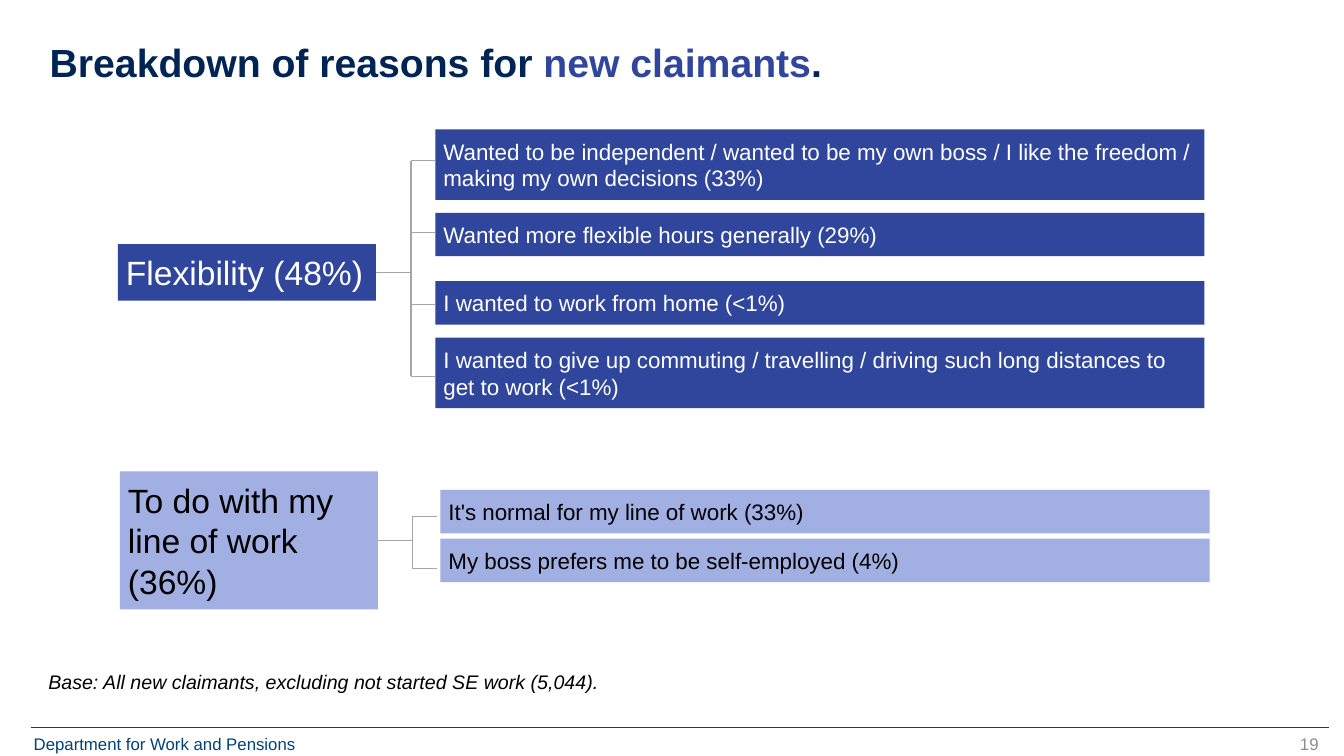
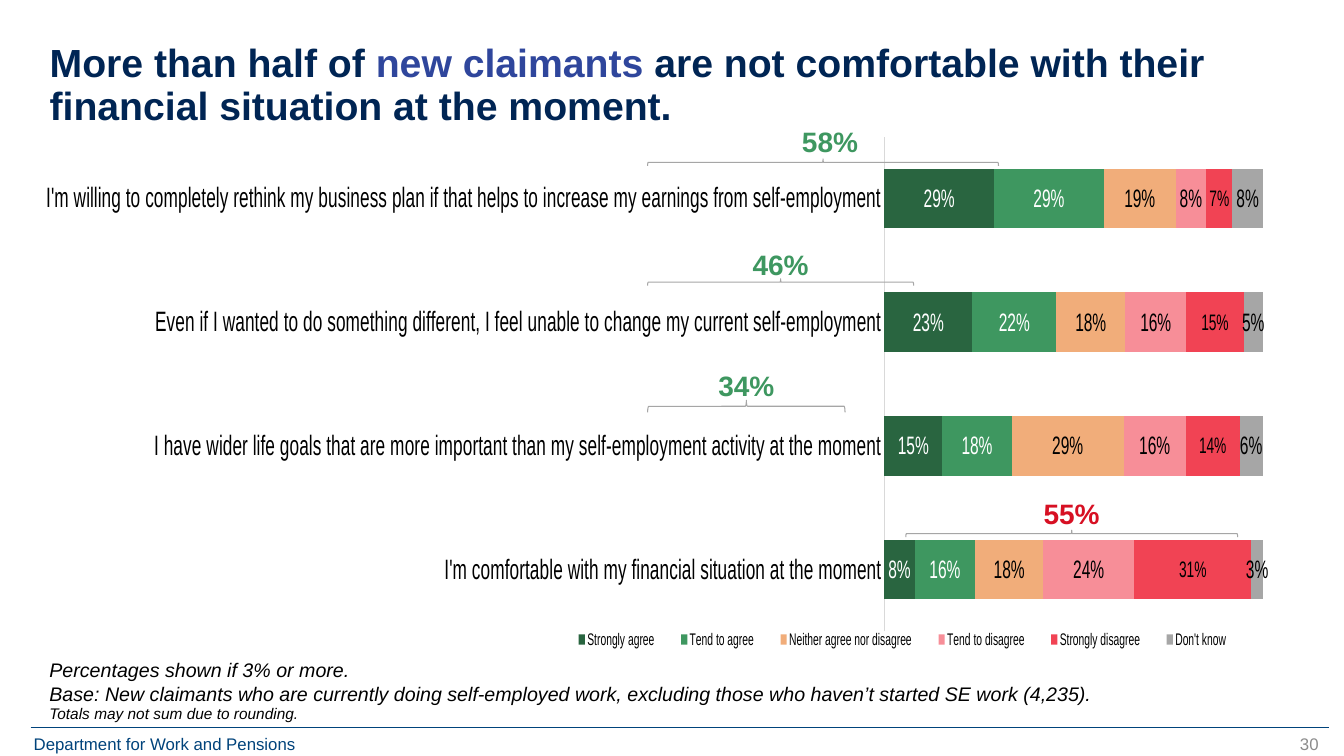
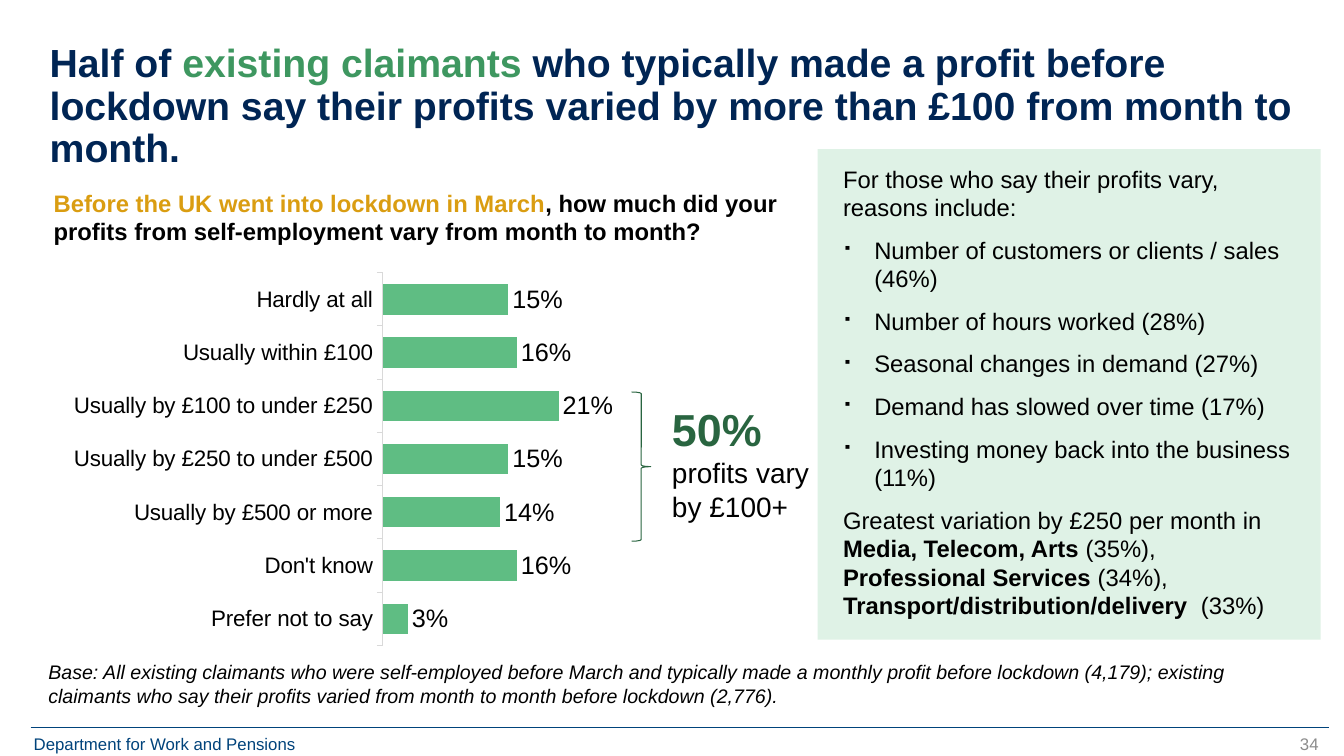
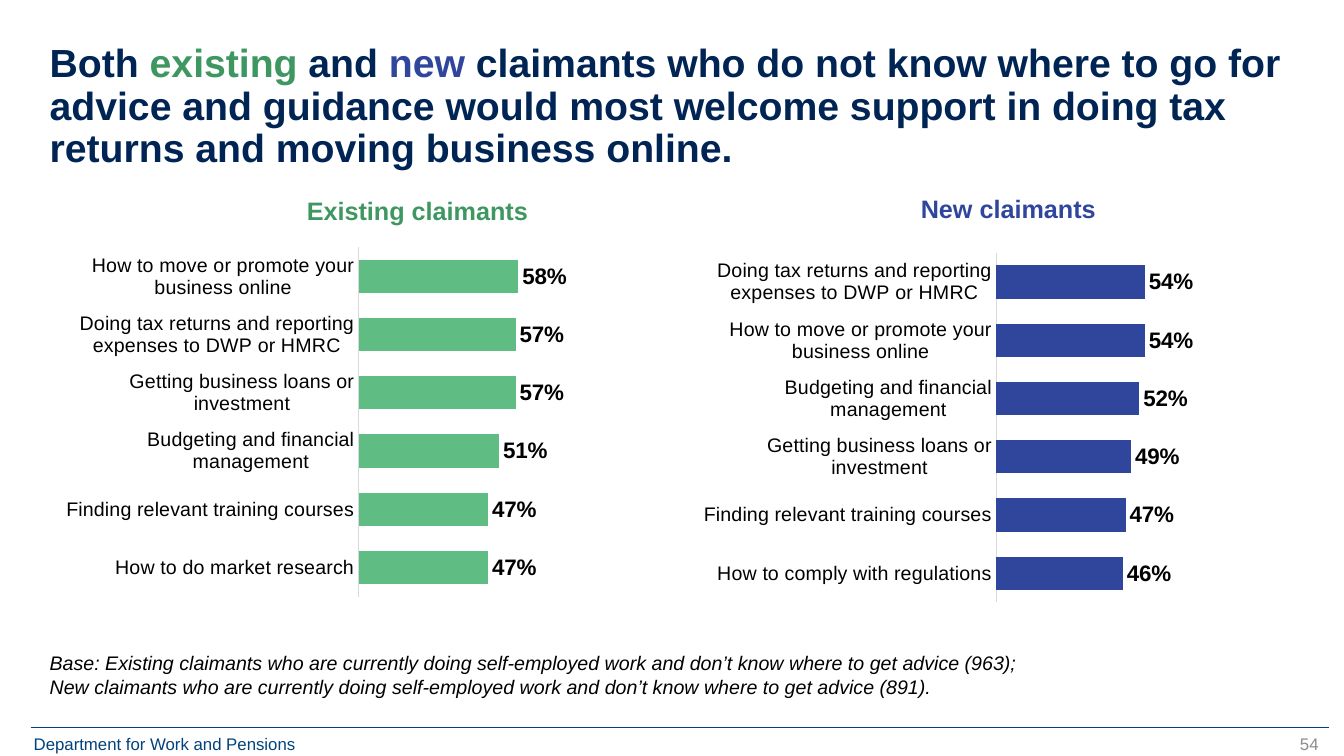
from dataclasses import dataclass
from typing import Optional

from lxml import etree
from pptx import Presentation
from pptx.chart.chart import Chart
from pptx.chart.data import CategoryChartData
from pptx.dml.color import RGBColor
from pptx.enum.chart import XL_CHART_TYPE, XL_LABEL_POSITION, XL_LEGEND_POSITION, XL_TICK_MARK
from pptx.enum.shapes import MSO_CONNECTOR, MSO_SHAPE
from pptx.enum.text import MSO_ANCHOR, MSO_AUTO_SIZE, PP_ALIGN
from pptx.oxml.ns import qn
from pptx.shapes.autoshape import Shape
from pptx.slide import Slide
from pptx.text.text import TextFrame
from pptx.util import Pt

# Shared style
FONT = "Arial"
NAVY = RGBColor(0x00, 0x25, 0x54)
BLUE = RGBColor(0x2F, 0x46, 0x9C)
PALE_BLUE = RGBColor(0xA1, 0xAF, 0xE3)
FOOTER_BLUE = RGBColor(0x00, 0x43, 0x7B)
DARK_GREEN = RGBColor(0x29, 0x65, 0x40)
GREEN = RGBColor(0x3E, 0x97, 0x60)
BAR_GREEN = RGBColor(0x5F, 0xBD, 0x83)
PALE_GREEN = RGBColor(0xDF, 0xF2, 0xE6)
ORANGE = RGBColor(0xF1, 0xAD, 0x7A)
PINK = RGBColor(0xF7, 0x8E, 0x98)
CORAL = RGBColor(0xF1, 0x43, 0x54)
RED = RGBColor(0xD7, 0x10, 0x23)
GOLD = RGBColor(0xDA, 0x9D, 0x11)
GREY = RGBColor(0xA6, 0xA6, 0xA6)
AXIS_GREY = RGBColor(0xD9, 0xD9, 0xD9)
PAGE_GREY = RGBColor(0x8C, 0x8C, 0x8C)
BLACK = RGBColor(0, 0, 0)
WHITE = RGBColor(0xFF, 0xFF, 0xFF)
MARGIN = 35.3
NO_INSET = (0, 0)
BOX_INSET = (5.76, 5.76)
TEXT_INSET = (7.2, 3.6)


@dataclass(frozen=True)
class Frame:
    left: float
    top: float
    width: float
    height: float

    def emu(self) -> tuple[int, int, int, int]:
        return Pt(self.left), Pt(self.top), Pt(self.width), Pt(self.height)


@dataclass(frozen=True)
class Span:
    text: str
    color: RGBColor = BLACK
    size: float = 14
    bold: bool = False
    italic: bool = False


@dataclass(frozen=True)
class Paragraph:
    spans: list[Span]
    bulleted: bool = False


@dataclass(frozen=True)
class Reason:
    text: str
    top: float
    height: float
    branch_y: float


@dataclass(frozen=True)
class ReasonTree:
    theme: str
    frame: Frame
    fill: RGBColor
    color: RGBColor
    reasons_left: float
    stem_y: float
    reasons: list[Reason]


@dataclass(frozen=True)
class Total:
    text: str
    color: RGBColor
    left: float
    width: float
    brace_y: float
    label_top: float
    depth: float = 5
    label_shift: float = 0


@dataclass(frozen=True)
class BarSeries:
    name: str
    values: list[float]
    fill: RGBColor
    label_color: RGBColor = BLACK
    label_size: float = 18


@dataclass(frozen=True)
class BarStyle:
    plot: tuple[float, float, float, float]
    axis_size: float
    gap: int = 75
    maximum: Optional[float] = None
    stacked: bool = False
    reverse: bool = False
    ticks: bool = False
    bold_labels: bool = False
    wrap_categories: bool = True


# Text
def write(frame: TextFrame, paragraphs: list[Paragraph], inset: tuple[float, float] = NO_INSET,
          align: PP_ALIGN = PP_ALIGN.LEFT, anchor: MSO_ANCHOR = MSO_ANCHOR.TOP,
          wrap: bool = True, gap: float = 0, line_spacing: float = 1.0) -> None:
    frame.word_wrap = wrap
    frame.auto_size = MSO_AUTO_SIZE.NONE
    frame.vertical_anchor = anchor
    frame.margin_left = frame.margin_right = Pt(inset[0])
    frame.margin_top = frame.margin_bottom = Pt(inset[1])
    for index, content in enumerate(paragraphs):
        paragraph = frame.add_paragraph() if index else frame.paragraphs[0]
        paragraph.alignment = align
        paragraph.line_spacing = line_spacing
        paragraph.space_before = paragraph.space_after = Pt(gap)
        if content.bulleted:
            properties = paragraph._p.get_or_add_pPr()
            properties.set("marL", str(Pt(22.3)))
            properties.set("indent", str(Pt(-22.3)))
            etree.SubElement(properties, qn("a:buSzPct")).set("val", "50000")
            etree.SubElement(properties, qn("a:buChar")).set("char", "▪")
        for span in content.spans:
            for number, line in enumerate(span.text.split("\n")):
                if number:
                    paragraph.add_line_break()
                if not line:
                    continue
                run = paragraph.add_run()
                run.text = line
                run.font.name = FONT
                run.font.size = Pt(span.size)
                run.font.bold = span.bold
                run.font.italic = span.italic
                run.font.color.rgb = span.color


def add_text(slide: Slide, frame: Frame, spans: list[Span],
             inset: tuple[float, float] = NO_INSET, align: PP_ALIGN = PP_ALIGN.LEFT,
             anchor: MSO_ANCHOR = MSO_ANCHOR.TOP, wrap: bool = True) -> None:
    box = slide.shapes.add_textbox(*frame.emu())
    write(box.text_frame, [Paragraph(spans)], inset, align, anchor, wrap)


def add_base(slide: Slide, top: float, text: str, left: float = MARGIN,
             width: float = 890) -> None:
    add_text(slide, Frame(left, top, width, 22), [Span(text, italic=True)])


# Shapes
def add_line(slide: Slide, x1: float, y1: float, x2: float, y2: float,
             color: RGBColor = GREY, weight: float = 0.75) -> None:
    line = slide.shapes.add_connector(MSO_CONNECTOR.STRAIGHT, Pt(x1), Pt(y1), Pt(x2), Pt(y2))
    line.line.color.rgb = color
    line.line.width = Pt(weight)
    etree.SubElement(line._element.spPr, qn("a:effectLst"))


def add_block(slide: Slide, frame: Frame, fill: RGBColor) -> Shape:
    block = slide.shapes.add_shape(MSO_SHAPE.RECTANGLE, *frame.emu())
    block.shadow.inherit = False
    block.fill.solid()
    block.fill.fore_color.rgb = fill
    block.line.fill.background()
    return block


def add_label_block(slide: Slide, frame: Frame, fill: RGBColor, label: Span) -> None:
    block = add_block(slide, frame, fill)
    write(block.text_frame, [Paragraph([label])], BOX_INSET, anchor=MSO_ANCHOR.MIDDLE)


def add_brace(slide: Slide, kind: MSO_SHAPE, frame: Frame, color: RGBColor,
              rotation: float = 0) -> None:
    brace = slide.shapes.add_shape(kind, *frame.emu())
    brace.shadow.inherit = False
    brace.rotation = rotation
    brace.fill.background()
    brace.line.color.rgb = color
    brace.line.width = Pt(0.75)


def add_total(slide: Slide, total: Total) -> None:
    center = total.left + total.width / 2
    add_brace(slide, MSO_SHAPE.LEFT_BRACE,
              Frame(center - total.depth / 2, total.brace_y - total.width / 2,
                    total.depth, total.width), GREY, 90)
    add_text(slide, Frame(center + total.label_shift - 59.5, total.label_top, 119, 24.5),
             [Span(total.text, total.color, 20, True)], align=PP_ALIGN.CENTER)


def add_reason_tree(slide: Slide, tree: ReasonTree) -> None:
    right = tree.frame.left + tree.frame.width
    spine = right + 25
    branches = [reason.branch_y for reason in tree.reasons]
    add_label_block(slide, tree.frame, tree.fill, Span(tree.theme, tree.color, 24))
    add_line(slide, right, tree.stem_y, spine, tree.stem_y)
    add_line(slide, spine, min(branches), spine, max(branches))
    for reason in tree.reasons:
        add_line(slide, spine, reason.branch_y, spine + 17, reason.branch_y)
        add_label_block(slide, Frame(tree.reasons_left, reason.top, 549.4, reason.height),
                        tree.fill, Span(reason.text, tree.color, 16))


# Charts
def manual_layout(settings: list[tuple[str, str]],
                  box: tuple[float, float, float, float]) -> etree.Element:
    layout = etree.Element(qn("c:layout"))
    manual = etree.SubElement(layout, qn("c:manualLayout"))
    for tag, value in [*settings, ("xMode", "edge"), ("yMode", "edge"),
                       *zip("xywh", map(str, box))]:
        etree.SubElement(manual, qn(f"c:{tag}")).set("val", value)
    return layout


def set_plot_layout(chart: Chart, plot: tuple[float, float, float, float]) -> None:
    area = chart._chartSpace.chart.plotArea
    for old in area.findall(qn("c:layout")):
        area.remove(old)
    area.insert(0, manual_layout([("layoutTarget", "inner")], plot))


def add_legend(chart: Chart, box: tuple[float, float, float, float]) -> None:
    chart.has_legend = True
    legend = chart.legend
    legend.position = XL_LEGEND_POSITION.BOTTOM
    legend.include_in_layout = False
    legend.font.name = FONT
    legend.font.size = Pt(12)
    legend.font.color.rgb = BLACK
    element = legend._element
    for old in element.findall(qn("c:layout")):
        element.remove(old)
    element.find(qn("c:legendPos")).addnext(manual_layout([], box))


def add_bars(slide: Slide, frame: Frame, categories: list[str],
             series_list: list[BarSeries], style: BarStyle) -> Chart:
    data = CategoryChartData(number_format="0%")
    data.categories = categories
    for series in series_list:
        data.add_series(series.name, series.values)
    kind = XL_CHART_TYPE.BAR_STACKED_100 if style.stacked else XL_CHART_TYPE.BAR_CLUSTERED
    chart = slide.shapes.add_chart(kind, *frame.emu(), data).chart
    chart.has_title = False
    chart.has_legend = False
    chart.font.name = FONT
    chart.font.size = Pt(style.axis_size)
    chart.font.color.rgb = BLACK

    axis = chart.category_axis
    axis.reverse_order = style.reverse
    axis.has_major_gridlines = False
    axis.major_tick_mark = XL_TICK_MARK.OUTSIDE if style.ticks else XL_TICK_MARK.NONE
    axis.minor_tick_mark = XL_TICK_MARK.NONE
    axis.format.line.color.rgb = AXIS_GREY
    axis.format.line.width = Pt(0.75)
    # Without text properties of its own, the axis keeps each category on one line
    if style.wrap_categories:
        axis.tick_labels.font.name = FONT
        axis.tick_labels.font.size = Pt(style.axis_size)
        axis.tick_labels.font.color.rgb = BLACK
    scale = chart.value_axis
    scale.visible = False
    scale.has_major_gridlines = False
    scale.minimum_scale = 0
    if style.maximum is not None:
        scale.maximum_scale = style.maximum

    plot = chart.plots[0]
    plot.gap_width = style.gap
    plot.vary_by_categories = False
    for drawn, series in zip(plot.series, series_list):
        drawn.format.fill.solid()
        drawn.format.fill.fore_color.rgb = series.fill
        labels = drawn.data_labels
        labels.show_value = True
        labels.number_format = "0%"
        labels.number_format_is_linked = False
        labels.position = (XL_LABEL_POSITION.CENTER if style.stacked
                           else XL_LABEL_POSITION.OUTSIDE_END)
        labels.font.name = FONT
        labels.font.size = Pt(series.label_size)
        labels.font.bold = style.bold_labels
        labels.font.color.rgb = series.label_color
    set_plot_layout(chart, style.plot)
    return chart


# Slide frame: title, footer rule, department and page number
def new_slide(deck: Presentation, page: int, title: list[tuple[str, RGBColor]]) -> Slide:
    slide = deck.slides.add_slide(deck.slide_layouts[5])
    heading = slide.shapes.title
    heading.left, heading.top, heading.width, heading.height = Frame(35.5, 31.3, 890, 61.2).emu()
    spans = [Span(text, color, 28, True) for text, color in title]
    write(heading.text_frame, [Paragraph(spans)], line_spacing=0.9)
    add_line(slide, 21.8, 519.6, 949, 519.6, FOOTER_BLUE, 0.5)
    add_text(slide, Frame(17, 520.6, 232.6, 21.6),
             [Span("Department for Work and Pensions", FOOTER_BLUE, 12)], TEXT_INSET)
    add_text(slide, Frame(733, 520.6, 216, 28.8), [Span(str(page), PAGE_GREY, 12)],
             TEXT_INSET, PP_ALIGN.RIGHT)
    return slide


def build_reasons(deck: Presentation) -> None:
    slide = new_slide(deck, 19, [("Breakdown of reasons for ", NAVY),
                                 ("new claimants", BLUE), (".", NAVY)])
    add_reason_tree(slide, ReasonTree(
        "Flexibility (48%)", Frame(84.2, 174.4, 184.4, 40.4), BLUE, WHITE, 311, 194.5, [
            Reason("Wanted to be independent / wanted to be my own boss / I like the freedom / "
                   "making my own decisions (33%)", 92.4, 50.4, 114.8),
            Reason("Wanted more flexible hours generally (29%)", 152, 31, 166.2),
            Reason("I wanted to work from home (<1%)", 200.9, 31, 217.4),
            Reason("I wanted to give up commuting / travelling / driving such long distances "
                   "to get to work (<1%)", 241.2, 50.4, 268.6),
        ]))
    add_reason_tree(slide, ReasonTree(
        "To do with my line of work (36%)", Frame(85.6, 336.8, 184.4, 98.6),
        PALE_BLUE, BLACK, 314.6, 386.4, [
            Reason("It's normal for my line of work (33%)", 350, 31, 368.8),
            Reason("My boss prefers me to be self-employed (4%)", 384.8, 31, 406.2),
        ]))
    add_base(slide, 478.4, "Base: All new claimants, excluding not started SE work (5,044).", 34.5)


def build_attitudes(deck: Presentation) -> None:
    slide = new_slide(deck, 30, [
        ("More than half of ", NAVY), ("new claimants ", BLUE),
        ("are not comfortable with their financial situation at the moment.", NAVY)])
    add_base(slide, 470, "Percentages shown if 3% or more.\nBase: New claimants who are currently "
             "doing self-employed work, excluding those who haven’t started SE work (4,235).")
    chart = add_bars(
        slide, Frame(33, 90.7, 875.5, 406.8),
        ["I'm willing to completely rethink my business plan if that helps to increase my "
         "earnings from self-employment",
         "Even if I wanted to do something different, I feel unable to change my current "
         "self-employment",
         "I have wider life goals that are more important than my self-employment activity "
         "at the moment",
         "I'm comfortable with my financial situation at the moment"],
        [BarSeries("Strongly agree", [0.29, 0.23, 0.15, 0.08], DARK_GREEN, WHITE),
         BarSeries("Tend to agree", [0.29, 0.22, 0.18, 0.16], GREEN, WHITE),
         BarSeries("Neither agree nor disagree", [0.19, 0.18, 0.29, 0.18], ORANGE),
         BarSeries("Tend to disagree", [0.08, 0.16, 0.16, 0.24], PINK),
         BarSeries("Strongly disagree", [0.07, 0.15, 0.14, 0.31], CORAL, label_size=16),
         BarSeries("Don't know", [0.08, 0.05, 0.06, 0.03], GREY)],
        BarStyle((0.486, 0.017, 0.502, 0.869), 20, gap=107, stacked=True, reverse=True,
                 wrap_categories=False))
    chart.plots[0].overlap = 100
    add_legend(chart, (0.05, 0.87, 0.92, 0.06))
    for total in (Total("58%", GREEN, 462.6, 250.6, 116, 89.3, label_shift=5),
                  Total("46%", GREEN, 462.6, 190, 201.6, 177.1),
                  Total("34%", GREEN, 462.6, 141, 290.2, 263.5, 8.6),
                  Total("55%", RED, 647, 237, 381.2, 354.4)):
        add_total(slide, total)
    add_text(slide, Frame(35.3, 501, 236, 15),
             [Span("Totals may not sum due to rounding.", size=11, italic=True)],
             anchor=MSO_ANCHOR.BOTTOM, wrap=False)


def build_profits(deck: Presentation) -> None:
    slide = new_slide(deck, 34, [
        ("Half of ", NAVY), ("existing claimants ", GREEN),
        ("who typically made a profit before lockdown say their profits varied by more than "
         "£100 from month to month.", NAVY)])
    add_bars(
        slide, Frame(33.3, 194.4, 479.5, 277.2),
        ["Hardly at all", "Usually within £100", "Usually by £100 to under £250",
         "Usually by £250 to under £500", "Usually by £500 or more", "Don't know",
         "Prefer not to say"],
        [BarSeries("Series 1", [0.15, 0.16, 0.21, 0.15, 0.14, 0.16, 0.03], BAR_GREEN)],
        BarStyle((0.501, 0.001, 0.499, 0.961), 16, maximum=0.4, reverse=True, ticks=True))
    add_brace(slide, MSO_SHAPE.RIGHT_BRACE, Frame(451.2, 280, 13.7, 106.6), DARK_GREEN)
    add_text(slide, Frame(480, 287, 104.4, 87),
             [Span("50%\n", DARK_GREEN, 32, True), Span("profits vary by £100+", size=20)])
    add_text(slide, Frame(31.2, 131, 553, 34.6),
             [Span("Before the UK went into lockdown in March", GOLD, 17, True),
              Span(", how much did your profits from self-employment vary from month to month?",
                   size=17, bold=True)], TEXT_INSET)

    # Reasons panel
    add_block(slide, Frame(584, 106.6, 359.3, 350.3), PALE_GREEN)
    reasons = ["Number of customers or clients / sales (46%)", "Number of hours worked (28%)",
               "Seasonal changes in demand (27%)", "Demand has slowed over time (17%)",
               "Investing money back into the business (11%)"]
    sectors = [("Media, Telecom, Arts ", "(35%), "), ("Professional Services ", "(34%), "),
               ("Transport/distribution/delivery ", " (33%)")]
    variation = [Span("Greatest variation by £250 per month in ", size=17)]
    for sector, share in sectors:
        variation += [Span(sector, size=17, bold=True), Span(share, size=17)]
    panel = slide.shapes.add_textbox(*Frame(595.1, 113.9, 335.5, 219).emu())
    write(panel.text_frame,
          [Paragraph([Span("For those who say their profits vary, reasons include:", size=17)]),
           *(Paragraph([Span(reason, size=17)], bulleted=True) for reason in reasons),
           Paragraph(variation)], TEXT_INSET, gap=5)
    add_base(slide, 471.6, "Base: All existing claimants who were self-employed before March and "
             "typically made a monthly profit before lockdown (4,179); existing claimants who "
             "say their profits varied from month to month before lockdown (2,776).", 34.5)


def build_support(deck: Presentation) -> None:
    slide = new_slide(deck, 54, [
        ("Both ", NAVY), ("existing", GREEN), (" and ", NAVY), ("new", BLUE),
        (" claimants who do not know where to go for advice and guidance would most welcome "
         "support in doing tax returns and moving business online.", NAVY)])
    research, regulations = "How to do market research", "How to comply with regulations"
    training = "Finding relevant training courses"
    budgeting = "Budgeting and financial management"
    loans = "Getting business loans or investment"
    tax = "Doing tax returns and reporting expenses to DWP or HMRC"
    online = "How to move or promote your business online"
    style = BarStyle((0.508, 0.127, 0.453, 0.858), 14, maximum=1, bold_labels=True)
    groups = [
        ("Existing claimants", GREEN, BAR_GREEN, Frame(35.2, 139.7, 434.9, 290.9),
         Frame(180.5, 139.7, 235.4, 21.6),
         [research, training, budgeting, loans, tax, online],
         [0.47, 0.47, 0.51, 0.57, 0.57, 0.58]),
        ("New claimants", BLUE, BLUE, Frame(490.6, 143.8, 434.9, 290.9),
         Frame(602.6, 138.2, 235.4, 21.6),
         [regulations, training, loans, budgeting, online, tax],
         [0.46, 0.47, 0.49, 0.52, 0.54, 0.54]),
    ]
    for name, color, fill, chart_frame, name_frame, topics, shares in groups:
        add_bars(slide, chart_frame, topics,
                 [BarSeries("Series 1", shares, fill, label_size=16)], style)
        add_text(slide, name_frame, [Span(name, color, 18, True)], align=PP_ALIGN.CENTER)
    add_base(slide, 465.2, "Base: Existing claimants who are currently doing self-employed work "
             "and don’t know where to get advice (963); New claimants who are currently doing "
             "self-employed work and don’t know where to get advice (891).", 35.5, 705.6)


def main() -> None:
    deck = Presentation()
    deck.slide_width, deck.slide_height = Pt(960), Pt(540)
    for build in (build_reasons, build_attitudes, build_profits, build_support):
        build(deck)
    deck.save("out.pptx")


if __name__ == "__main__":
    main()
